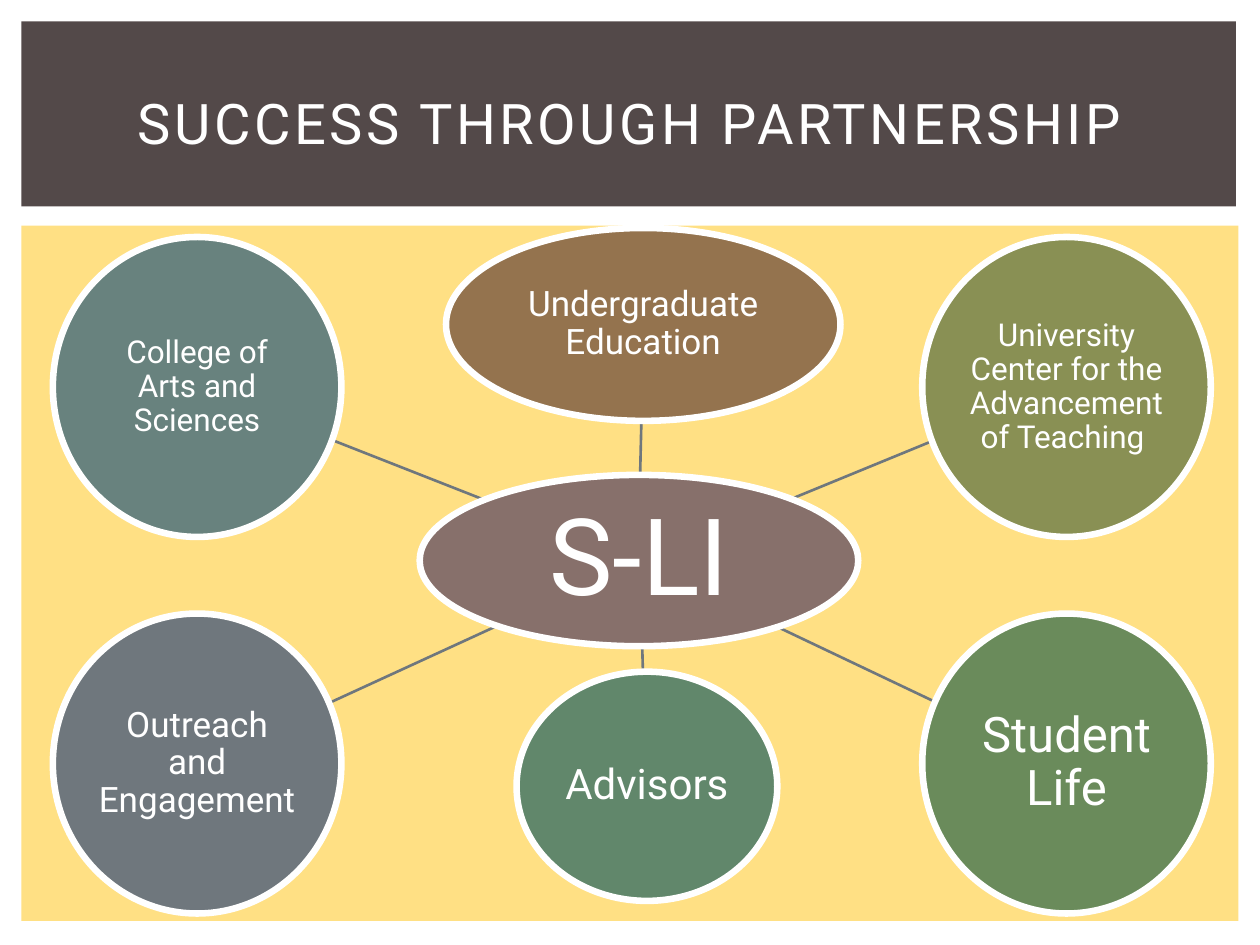
from pptx import Presentation
from pptx.dml.color import RGBColor
from pptx.enum.shapes import MSO_CONNECTOR, MSO_SHAPE
from pptx.enum.text import MSO_ANCHOR, PP_ALIGN
from pptx.oxml.ns import qn
from pptx.util import Pt
from lxml import etree

RECTANGLE, OVAL = MSO_SHAPE.RECTANGLE, MSO_SHAPE.OVAL
STRAIGHT = MSO_CONNECTOR.STRAIGHT
MIDDLE, CENTER = MSO_ANCHOR.MIDDLE, PP_ALIGN.CENTER


def color(value):
    return RGBColor.from_string(value)


def write(shape, text, size, inset=1, line_spacing=0.9, tracking=0):
    frame = shape.text_frame
    frame.word_wrap = True
    frame.vertical_anchor = MIDDLE
    frame.margin_left = frame.margin_right = Pt(inset)
    frame.margin_top = frame.margin_bottom = Pt(inset)
    para = frame.paragraphs[0]
    para.alignment = CENTER
    para.line_spacing = line_spacing
    span = para.add_run()
    span.text = text
    span.font.name = "Roboto"
    span.font.size = Pt(size)
    span.font.color.rgb = color("FFFFFF")
    if tracking:
        span.font._element.set("spc", str(tracking * 100))


deck = Presentation()
deck.slide_width, deck.slide_height = Pt(720), Pt(540)
page = deck.slides.add_slide(deck.slide_layouts[6])

panels = [
    (12.2, 128.9, 695.5, 397.4, "FFE084"),
    (12.2, 12.2, 694, 105.8, "534949"),
]
for left, top, width, height, fill in panels:
    panel = page.shapes.add_shape(RECTANGLE, Pt(left), Pt(top), Pt(width), Pt(height))
    panel.shadow.inherit = False
    panel.fill.solid()
    panel.fill.fore_color.rgb = color(fill)
    panel.line.fill.background()

spokes = [
    (365.8, 271.4, 366.5, 241.2),
    (452.2, 285.1, 532.8, 252),
    (445, 358.6, 534.2, 401),
    (367, 369.4, 367.4, 383.8),
    (277.2, 285.8, 189.4, 251.3),
    (283.7, 357.8, 187.9, 401.8),
]
for start_x, start_y, end_x, end_y in spokes:
    spoke = page.shapes.add_connector(
        STRAIGHT, Pt(start_x), Pt(start_y), Pt(end_x), Pt(end_y))
    spoke.line.color.rgb = color("6F777D")
    spoke.line.width = Pt(1.5)
    etree.SubElement(spoke._element.spPr, qn("a:effectLst"))

left_x, right_x, upper_y, lower_y = 30.2, 527, 135.4, 350.6
circle = (164.9, 171.4)
ovals = [
    ("S-LI", 61, "87706B", 239.8, 271.4, 250.6, 97.9),
    ("Undergraduate Education", 20, "94734E", 254.9, 130.3, 225.4, 110.2),
    ("University Center for the Advancement of Teaching ", 18, "899054",
     right_x, upper_y, *circle),
    ("Student Life", 28, "6A8B5B", right_x, lower_y, *circle),
    ("Advisors", 24, "61876B", 295.2, 383.8, 149, 131),
    ("College of Arts and Sciences", 18, "68827E", left_x, upper_y, *circle),
    ("Outreach and Engagement", 20, "6F777D", left_x, lower_y, *circle),
]
for text, size, fill, left, top, width, height in ovals:
    oval = page.shapes.add_shape(OVAL, Pt(left), Pt(top), Pt(width), Pt(height))
    oval.shadow.inherit = False
    oval.fill.solid()
    oval.fill.fore_color.rgb = color(fill)
    oval.line.color.rgb = color("FFFFFF")
    oval.line.width = Pt(3.75)
    write(oval, text, size)

title = page.shapes.add_textbox(Pt(30), Pt(28), Pt(660), Pt(83))
write(title, "SUCCESS THROUGH PARTNERSHIP", 32, inset=4, line_spacing=1, tracking=2)

deck.save("out.pptx")
